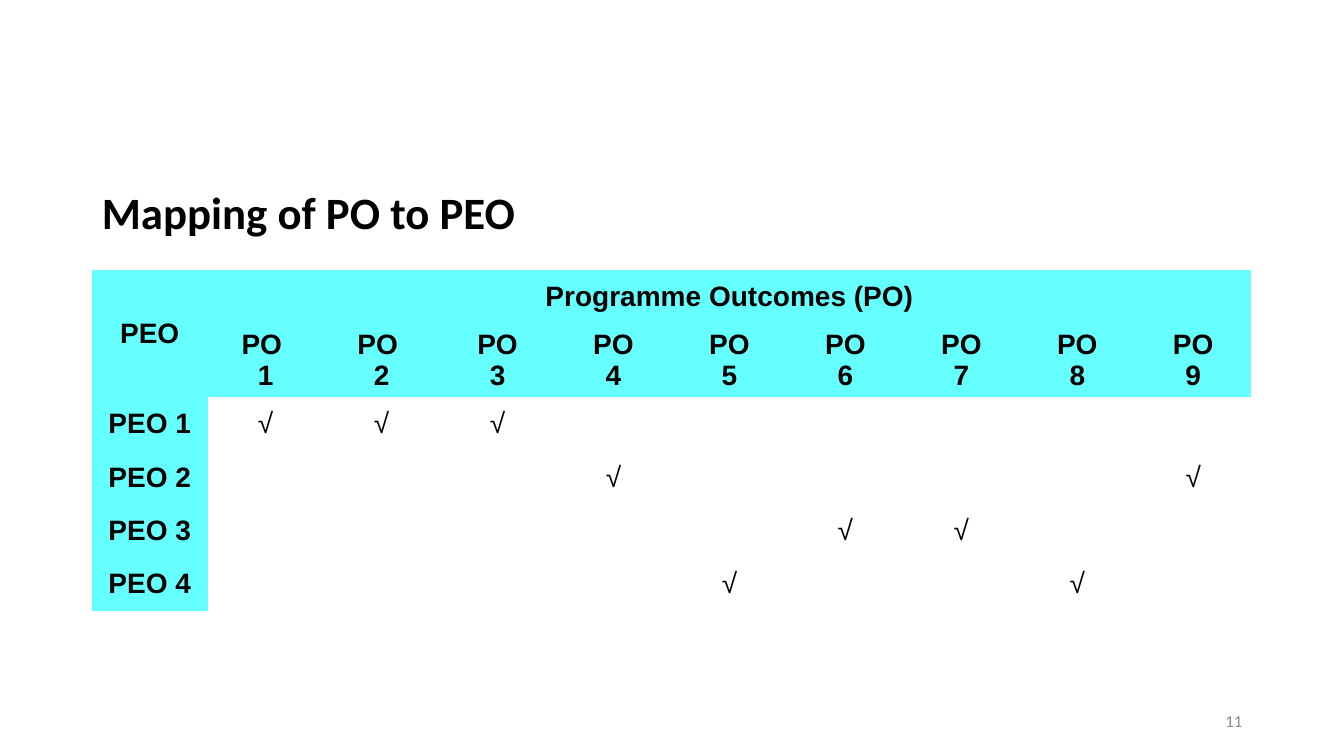
from pptx import Presentation
from pptx.dml.color import RGBColor as RGB
from pptx.enum.text import MSO_ANCHOR as Anchor, MSO_AUTO_SIZE as Auto, PP_ALIGN as Align
from pptx.util import Inches, Pt

CYAN = "66FFFF"
BLACK = "000000"
NO_GRID = "{2D5ABB26-0587-4C30-8999-92F81FD0307C}"
TICKS = {1: (1, 2, 3), 2: (4, 9), 3: (6, 7), 4: (5, 8)}
ROWS = (0.53, 0.73, 0.53, 0.53, 0.53, 0.53)


def paint(target, color):
    target.rgb = RGB.from_string(color)


def write(frame, lines, size, face, color=BLACK, bold=False, align=Align.CENTER):
    for i, line in enumerate(lines):
        para = frame.add_paragraph() if i else frame.paragraphs[0]
        para.alignment = align
        run = para.add_run()
        run.text = line
        run.font.size = Pt(size)
        run.font.name = face
        run.font.bold = bold
        paint(run.font.color, color)


def add_title(slide, text):
    title = slide.shapes.title
    title.left, title.top = Inches(0.91), Inches(1.79)
    title.width, title.height = Inches(11.5), Inches(0.69)
    frame = title.text_frame
    frame.auto_size = Auto.NONE
    frame.vertical_anchor = Anchor.MIDDLE
    write(frame, [text], 32, "Calibri", bold=True, align=Align.LEFT)
    frame.paragraphs[0].line_spacing = 0.9


def fill_cell(cell, *lines, head=False):
    cell.vertical_anchor = Anchor.MIDDLE
    if head:
        cell.fill.solid()
        paint(cell.fill.fore_color, CYAN)
    else:
        cell.fill.background()
    write(cell.text_frame, lines, 20, "Arial", bold=head)


def add_map(slide):
    frame = slide.shapes.add_table(
        6, 10, Inches(0.91), Inches(2.68), Inches(11.5), Inches(sum(ROWS)))
    table = frame.table
    table.first_row = table.horz_banding = False
    table._tbl.tblPr[0].text = NO_GRID
    for col in table.columns:
        col.width = Inches(1.15)
    for row, height in zip(table.rows, ROWS):
        row.height = Inches(height)

    table.cell(0, 0).merge(table.cell(1, 0))
    table.cell(0, 1).merge(table.cell(0, 9))
    fill_cell(table.cell(0, 0), "PEO", head=True)
    fill_cell(table.cell(0, 1), "Programme Outcomes (PO)", head=True)
    for po in range(1, 10):
        label = "PO " if po < 3 else "PO"
        fill_cell(table.cell(1, po), label, str(po), head=True)
    for peo, ticks in TICKS.items():
        fill_cell(table.cell(peo + 1, 0), f"PEO {peo}", head=True)
        for po in range(1, 10):
            marks = ["√"] if po in ticks else []
            fill_cell(table.cell(peo + 1, po), *marks)


def add_number(slide, text):
    box = slide.shapes.add_textbox(Inches(9.42), Inches(6.95), Inches(3), Inches(0.4))
    frame = box.text_frame
    frame.word_wrap = True
    frame.vertical_anchor = Anchor.MIDDLE
    write(frame, [text], 12, "Calibri", "888888", align=Align.RIGHT)


def main():
    deck = Presentation()
    deck.slide_width, deck.slide_height = Inches(13.33), Inches(7.5)
    slide = deck.slides.add_slide(deck.slide_layouts[5])
    add_title(slide, "Mapping of PO to PEO")
    add_map(slide)
    add_number(slide, "11")
    deck.save("out.pptx")


if __name__ == "__main__":
    main()
